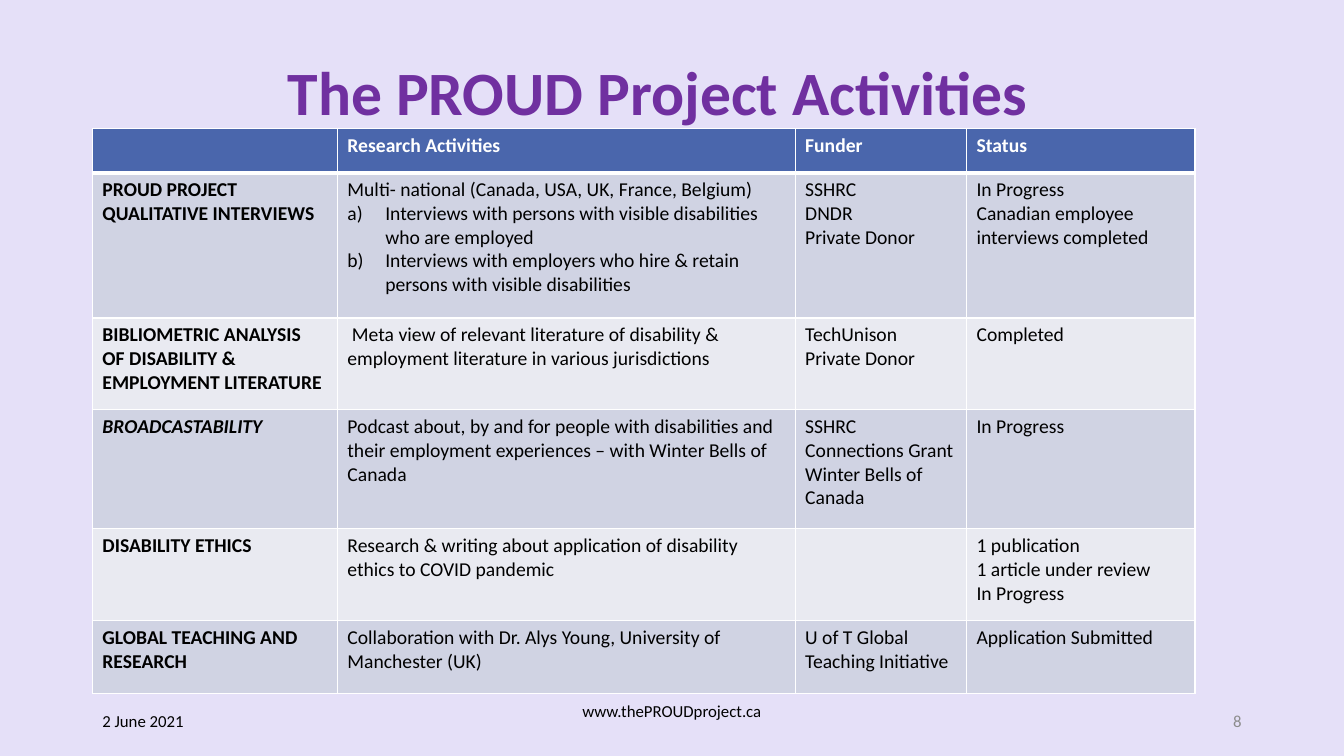
import pptx
import pptx.util
import pptx.dml.color
import pptx.enum.text
import lxml.etree

Pt = pptx.util.Pt
RGB = pptx.dml.color.RGBColor
ALIGN = pptx.enum.text.PP_ALIGN
MIDDLE = pptx.enum.text.MSO_ANCHOR.MIDDLE

LILAC = RGB(0xE5, 0xE0, 0xF8)
PURPLE = RGB(0x70, 0x30, 0xA0)
BLUE = RGB(0x4A, 0x66, 0xAC)
BANDS = [RGB(0xD0, 0xD3, 0xE3), RGB(0xE9, 0xEA, 0xF1)]
WHITE = RGB(0xFF, 0xFF, 0xFF)
BLACK = RGB(0, 0, 0)
GREY = RGB(0x8C, 0x8C, 0x8C)
FACE = "Calibri"

WIDTHS = [175, 327, 122.4, 163.3]
HEIGHTS = [31.4, 103.7, 65.6, 85, 65.6, 52.4]

# Each line of a cell is a paragraph; a leading "#" marks a lettered item
ROWS = [
    ["", "Research Activities", "Funder", "Status"],
    ["PROUD PROJECT QUALITATIVE INTERVIEWS",
     "Multi- national (Canada, USA, UK, France, Belgium)\n"
     "#Interviews with persons with visible disabilities who are employed\n"
     "#Interviews with employers who hire & retain persons with visible disabilities",
     "SSHRC\nDNDR\nPrivate Donor",
     "In Progress\nCanadian employee interviews completed"],
    ["BIBLIOMETRIC ANALYSIS OF DISABILITY & EMPLOYMENT LITERATURE",
     " Meta view of relevant literature of disability & employment literature "
     "in various jurisdictions",
     "TechUnison\nPrivate Donor", "Completed"],
    ["BROADCASTABILITY",
     "Podcast about, by and for people with disabilities and their employment "
     "experiences – with Winter Bells of Canada",
     "SSHRC Connections Grant\nWinter Bells of Canada", "In Progress"],
    ["DISABILITY ETHICS",
     "Research & writing about application of disability ethics to COVID pandemic",
     "", "1 publication\n1 article under review\nIn Progress"],
    ["GLOBAL TEACHING AND RESEARCH",
     "Collaboration with Dr. Alys Young, University of Manchester (UK)",
     "U of T Global Teaching Initiative", "Application Submitted"],
]


def add_node(parent, tag, **attrs):
    return lxml.etree.SubElement(parent, pptx.oxml.ns.qn(tag), **attrs)


def style(para, size, color, bold=False, italic=False):
    font = para.font
    font.name, font.size = FACE, Pt(size)
    font.bold, font.italic = bold, italic
    font.color.rgb = color


def letter(para):
    """Number a paragraph a), b) with a hanging indent."""
    props = para._p.get_or_add_pPr()
    props.set("marL", str(Pt(27)))
    props.set("indent", str(-Pt(27)))
    add_node(props, "a:buFont", typeface="+mj-lt")
    add_node(props, "a:buAutoNum", type="alphaLcParenR")


def frame(cell, base):
    """Draw white borders, with the given width below the cell."""
    props = cell._tc.get_or_add_tcPr()
    for side, width in (("L", 1), ("R", 1), ("T", 1), ("B", base)):
        line = add_node(props, "a:ln" + side, w=str(Pt(width)))
        fill = add_node(line, "a:solidFill")
        add_node(fill, "a:srgbClr", val=str(WHITE))


def fill_cell(cell, text, row, col):
    head = row == 0
    frame(cell, 3 if head else 1)
    cell.fill.solid()
    cell.fill.fore_color.rgb = BLUE if head else BANDS[(row - 1) % 2]
    cell.text = text.replace("#", "")
    for para, line in zip(cell.text_frame.paragraphs, text.split("\n")):
        if line.startswith("#"):
            letter(para)
        style(para, 14, WHITE if head else BLACK, head or col == 0,
              text == "BROADCASTABILITY")


def place_title(slide, left, top, width, height):
    title = slide.shapes.title
    title.left, title.top = Pt(left), Pt(top)
    title.width, title.height = Pt(width), Pt(height)
    title.text_frame.text = "The PROUD Project Activities"
    title.text_frame.vertical_anchor = MIDDLE
    para = title.text_frame.paragraphs[0]
    para.alignment, para.line_spacing = ALIGN.CENTER, 0.9
    style(para, 44, PURPLE, True)


def place_table(slide, left, top):
    table = slide.shapes.add_table(
        len(ROWS), len(WIDTHS), Pt(left), Pt(top),
        Pt(sum(WIDTHS)), Pt(sum(HEIGHTS))).table
    for col, width in zip(table.columns, WIDTHS):
        col.width = Pt(width)
    for row, height in zip(table.rows, HEIGHTS):
        row.height = Pt(height)
    for row, texts in enumerate(ROWS):
        for col, text in enumerate(texts):
            fill_cell(table.cell(row, col), text, row, col)


def place_footer(slide, left, top, width, height):
    # Text, left offset, rise, width, alignment, colour
    parts = [
        ("2 June 2021", 0, 0, 216, ALIGN.LEFT, BLACK),
        ("www.thePROUDproject.ca", (width - 324) / 2, 7.2, 324, ALIGN.CENTER, BLACK),
        ("8", width - 216, 0, 216, ALIGN.RIGHT, GREY),
    ]
    for text, shift, rise, span, align, color in parts:
        box = slide.shapes.add_textbox(
            Pt(left + shift), Pt(top - rise), Pt(span), Pt(height))
        body = box.text_frame
        body.word_wrap = True
        body.vertical_anchor = MIDDLE
        body.text = text
        para = body.paragraphs[0]
        para.alignment = align
        style(para, 12, color)


def main():
    deck = pptx.Presentation()
    deck.slide_width, deck.slide_height = Pt(960), Pt(540)
    slide = deck.slides.add_slide(deck.slide_layouts[5])
    back = slide.background.fill
    back.solid()
    back.fore_color.rgb = LILAC
    place_title(slide, 66, 28.8, 808, 79.2)
    place_table(slide, 66, 92)
    place_footer(slide, 66, 500.5, 828, 28.8)
    deck.save("out.pptx")


if __name__ == "__main__":
    main()
